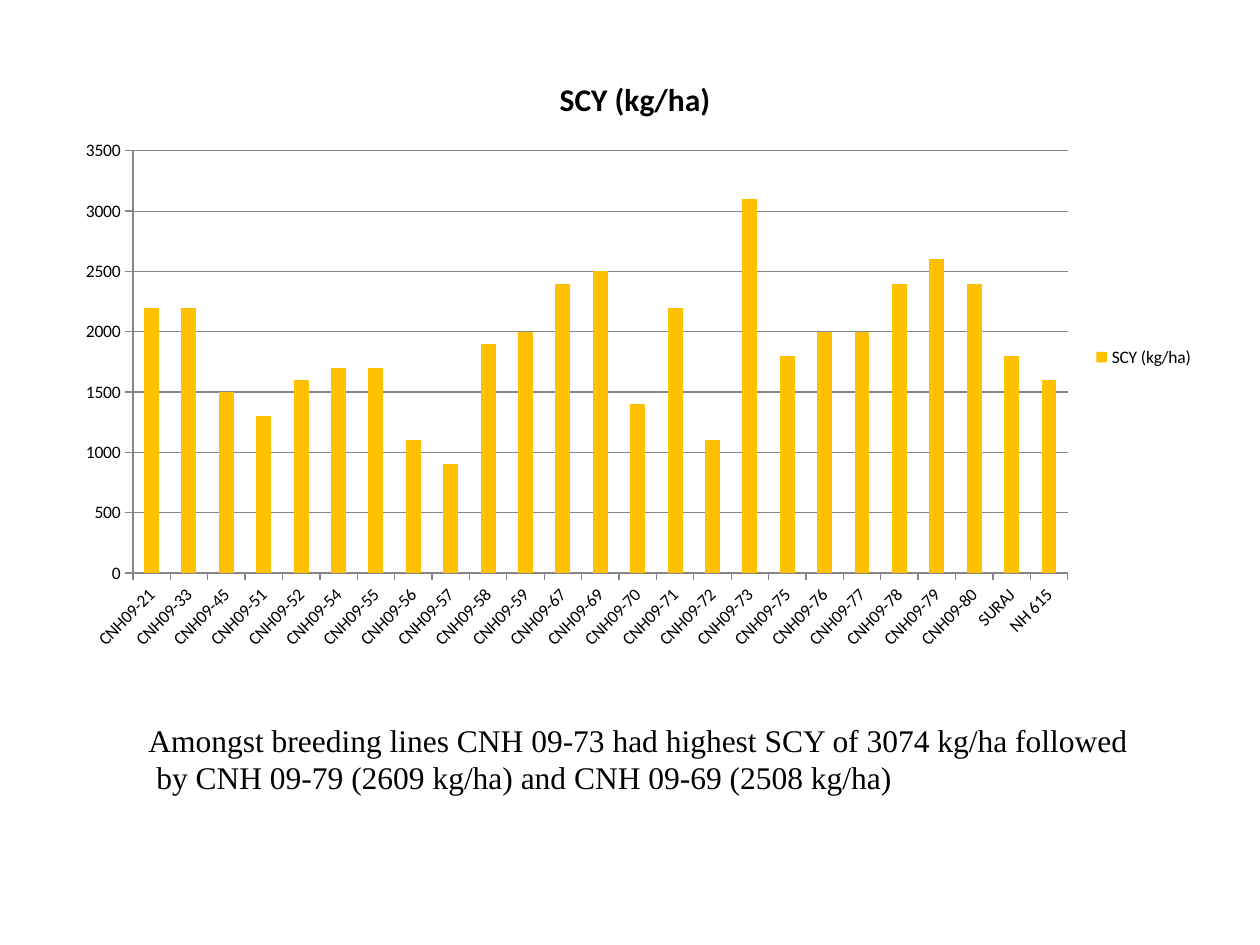
from pptx import Presentation
from pptx import util as u
from pptx.chart.data import CategoryChartData
from pptx.dml.color import RGBColor
from pptx.enum import chart as charts, text

SERIES_NAME = "SCY (kg/ha)"
YIELDS = {
    "CNH09-21": 2200, "CNH09-33": 2200, "CNH09-45": 1500, "CNH09-51": 1300,
    "CNH09-52": 1600, "CNH09-54": 1700, "CNH09-55": 1700, "CNH09-56": 1100,
    "CNH09-57": 900, "CNH09-58": 1900, "CNH09-59": 2000, "CNH09-67": 2400,
    "CNH09-69": 2500, "CNH09-70": 1400, "CNH09-71": 2200, "CNH09-72": 1100,
    "CNH09-73": 3100, "CNH09-75": 1800, "CNH09-76": 2000, "CNH09-77": 2000,
    "CNH09-78": 2400, "CNH09-79": 2600, "CNH09-80": 2400, "SURAJ": 1800,
    "NH 615": 1600,
}
FINDINGS = [
    "Amongst breeding lines CNH 09-73 had highest SCY of 3074 kg/ha followed",
    " by CNH 09-79 (2609 kg/ha) and CNH 09-69 (2508 kg/ha)",
]


def color(value):
    """Turn a hex string into a colour."""
    return RGBColor.from_string(value)


def style_font(font, size, name="Calibri", fill="000000", bold=False):
    """Set the format of a font."""
    font.size = u.Pt(size)
    font.name = name
    font.bold = bold
    font.color.rgb = color(fill)


def style_line(line):
    """Give a chart line its grey colour and width."""
    line.color.rgb = color("868686")
    line.width = u.Pt(0.75)


def write(paragraph, content, align=None, **font_format):
    """Write one formatted run into a paragraph."""
    paragraph.alignment = align
    run = paragraph.add_run()
    run.text = content
    style_font(run.font, **font_format)


def style_axis(axis):
    """Give an axis grey lines and outside ticks."""
    axis.major_tick_mark = charts.XL_TICK_MARK.OUTSIDE
    axis.minor_tick_mark = charts.XL_TICK_MARK.NONE
    style_line(axis.format.line)
    style_font(axis.tick_labels.font, 10)


def add_yield_chart(slide, left, top, width, height):
    """Place the column chart of yields in the given box."""
    data = CategoryChartData()
    data.categories = list(YIELDS)
    data.add_series(SERIES_NAME, list(YIELDS.values()))
    chart = slide.shapes.add_chart(
        charts.XL_CHART_TYPE.COLUMN_CLUSTERED, left, top, width, height, data
    ).chart
    style_font(chart.font, 10)

    chart.has_title = True
    title = chart.chart_title
    title.include_in_layout = False
    write(title.text_frame.paragraphs[0], SERIES_NAME, size=18, bold=True)

    chart.has_legend = True
    chart.legend.position = charts.XL_LEGEND_POSITION.RIGHT
    chart.legend.include_in_layout = False
    style_font(chart.legend.font, 10)

    style_axis(chart.category_axis)
    value_axis = chart.value_axis
    style_axis(value_axis)
    value_axis.minimum_scale = 0
    value_axis.maximum_scale = 3500
    value_axis.major_unit = 500
    value_axis.has_major_gridlines = True
    style_line(value_axis.major_gridlines.format.line)

    plot = chart.plots[0]
    plot.gap_width = 150
    plot.vary_by_categories = False
    fill = plot.series[0].format.fill
    fill.solid()
    fill.fore_color.rgb = color("FFC000")


def add_findings(slide, left, top, width, height):
    """Place the summary lines in the given box."""
    frame = slide.shapes.add_textbox(left, top, width, height).text_frame
    frame.word_wrap = False
    frame.auto_size = text.MSO_AUTO_SIZE.SHAPE_TO_FIT_TEXT
    for index, line in enumerate(FINDINGS):
        paragraph = frame.add_paragraph() if index else frame.paragraphs[0]
        write(paragraph, line, align=text.PP_ALIGN.JUSTIFY,
              size=18, name="Times New Roman")


def main():
    """Build the slide and save it."""
    presentation = Presentation()
    presentation.slide_width = u.Inches(10)
    presentation.slide_height = u.Inches(7.5)
    slide = presentation.slides.add_slide(presentation.slide_layouts[6])
    add_yield_chart(slide, u.Inches(0.5), u.Inches(0.42),
                    u.Inches(9.08), u.Inches(4.83))
    add_findings(slide, u.Inches(1.08), u.Inches(5.67),
                 u.Inches(8.05), u.Inches(0.71))
    presentation.save("out.pptx")


if __name__ == "__main__":
    main()
